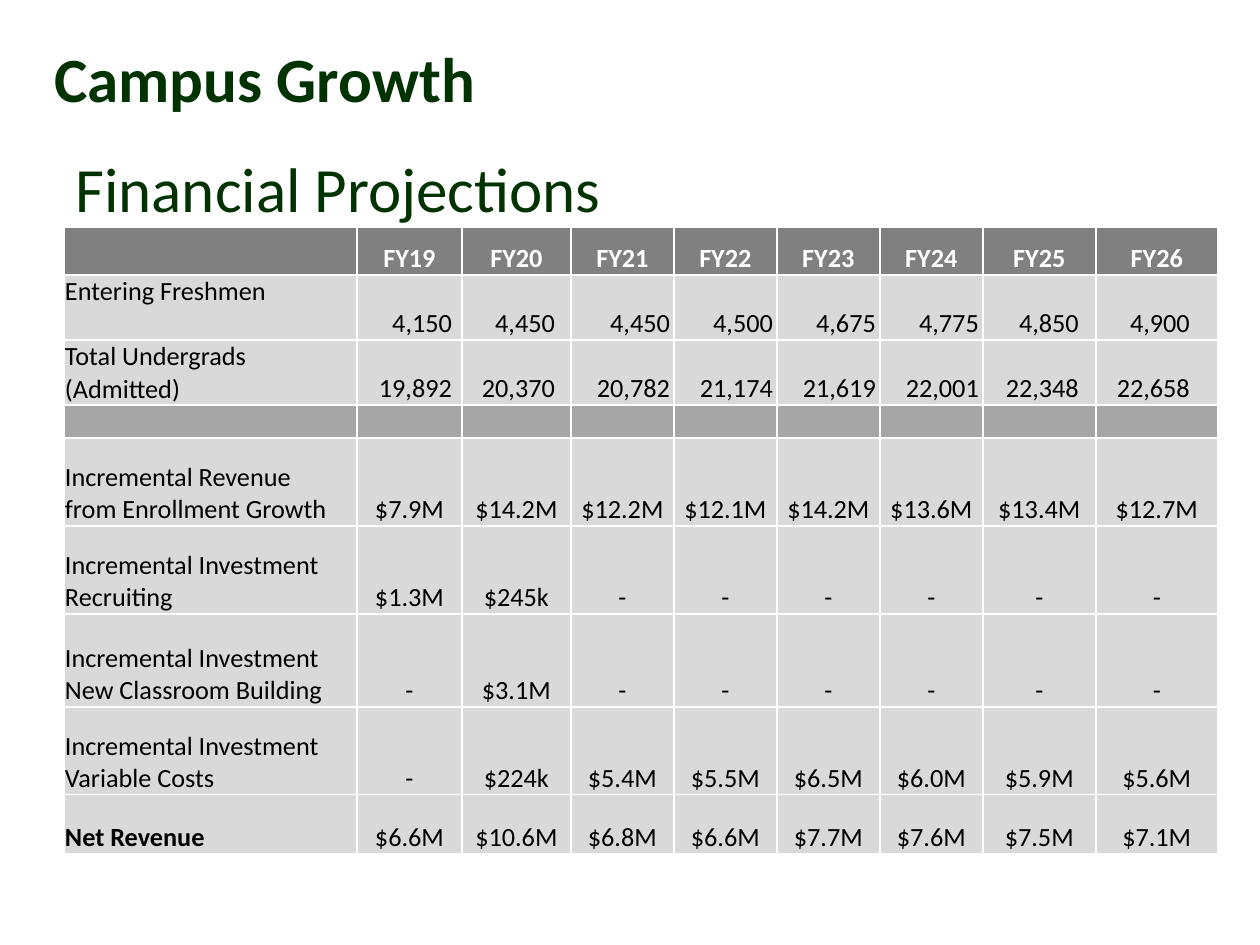
from pptx import Presentation
from pptx.dml.color import RGBColor
from pptx.enum.text import MSO_ANCHOR, PP_ALIGN
from pptx.oxml import parse_xml
from pptx.oxml.ns import nsdecls
from pptx.util import Emu, Pt

TOP, MIDDLE, BOTTOM = MSO_ANCHOR.TOP, MSO_ANCHOR.MIDDLE, MSO_ANCHOR.BOTTOM
LEFT, CENTER, RIGHT = PP_ALIGN.LEFT, PP_ALIGN.CENTER, PP_ALIGN.RIGHT

GREEN = RGBColor(0x00, 0x33, 0x00)
BLACK = RGBColor(0x00, 0x00, 0x00)
WHITE = RGBColor(0xFF, 0xFF, 0xFF)
HEADER_GRAY = RGBColor(0x80, 0x80, 0x80)
DIVIDER_GRAY = RGBColor(0xA6, 0xA6, 0xA6)
BODY_GRAY = RGBColor(0xD9, 0xD9, 0xD9)

PX_PER_INCH = 126
FONT = "Calibri"
COLUMN_WIDTHS = [293, 105, 109, 103, 103, 103, 103, 113, 122]
ROW_HEIGHTS = [48, 65, 65, 33, 88, 88, 93, 88, 59]
COUNT_INSETS = [10, 16, 4, 4, 4, 4, 17, 28]
HEADER_ROW, DIVIDER_ROW, NET_ROW = 0, 3, 8
COUNT_ROWS = (1, 2)

PROJECTIONS = [
    ["", "FY19", "FY20", "FY21", "FY22", "FY23", "FY24", "FY25", "FY26"],
    ["Entering Freshmen", "4,150", "4,450", "4,450", "4,500", "4,675", "4,775", "4,850", "4,900"],
    ["Total Undergrads (Admitted)", "19,892", "20,370", "20,782", "21,174", "21,619", "22,001",
     "22,348", "22,658"],
    [""] * 9,
    ["Incremental Revenue\nfrom Enrollment Growth", "$7.9M", "$14.2M", "$12.2M", "$12.1M",
     "$14.2M", "$13.6M", "$13.4M", "$12.7M"],
    ["Incremental Investment Recruiting", "$1.3M", "$245k"] + ["-"] * 6,
    ["Incremental Investment New Classroom Building", "-", "$3.1M"] + ["-"] * 6,
    ["Incremental Investment Variable Costs", "-", "$224k", "$5.4M", "$5.5M", "$6.5M", "$6.0M",
     "$5.9M", "$5.6M"],
    ["Net Revenue", "$6.6M", "$10.6M", "$6.8M", "$6.6M", "$7.7M", "$7.6M", "$7.5M", "$7.1M"],
]


def px(length):
    """Turn whole pixels into EMU."""
    return Emu(round(length * 914400 / PX_PER_INCH))


def apply_format(target, values):
    """Set each attribute named in a dict of format values."""
    for name, value in values.items():
        setattr(target, name, value)


def format_para(para, size, color, bold, align):
    """Give a paragraph its alignment and font."""
    para.alignment = align
    apply_format(para.font, {"name": FONT, "size": Pt(size), "bold": bold})
    para.font.color.rgb = color


def add_heading(page, left, top, width, height, text, bold):
    """Place a large green heading, centred vertically in its box."""
    box = page.shapes.add_textbox(px(left), px(top), px(width), px(height))
    frame = box.text_frame
    apply_format(frame, {"word_wrap": True, "vertical_anchor": MIDDLE, "text": text})
    format_para(frame.paragraphs[0], 36, GREEN, bold, LEFT)


def add_borders(cell):
    """Draw thin white lines on all four sides of a cell."""
    properties = cell._tc.get_or_add_tcPr()
    for side in ("lnL", "lnR", "lnT", "lnB"):
        properties.append(parse_xml(
            f'<a:{side} {nsdecls("a")} w="{Pt(1)}"><a:solidFill>'
            f'<a:srgbClr val="{WHITE}"/></a:solidFill></a:{side}>'))


def fill_cell(cell, row, column, text):
    """Write and style one table cell according to its row and column."""
    is_header = row == HEADER_ROW
    is_label = column == 0
    is_count = row in COUNT_ROWS and not is_label
    align = LEFT if is_label else RIGHT if is_count else CENTER
    apply_format(cell, {
        "text": text,
        "margin_left": px(1),
        "margin_top": px(1),
        "margin_right": px(COUNT_INSETS[column - 1] if is_count else 1),
        "margin_bottom": 0,
        "vertical_anchor": TOP if is_label and row == COUNT_ROWS[0] else BOTTOM,
    })
    add_borders(cell)
    cell.fill.solid()
    cell.fill.fore_color.rgb = {HEADER_ROW: HEADER_GRAY, DIVIDER_ROW: DIVIDER_GRAY}.get(row, BODY_GRAY)
    bold = is_header or (is_label and row == NET_ROW)
    for para in cell.text_frame.paragraphs:
        format_para(para, 15, WHITE if is_header else BLACK, bold, align)


def add_projections(page, left, top):
    """Place the table of yearly financial projections."""
    frame = page.shapes.add_table(
        len(ROW_HEIGHTS), len(COLUMN_WIDTHS), px(left), px(top),
        px(sum(COLUMN_WIDTHS)), px(sum(ROW_HEIGHTS)))
    table = frame.table
    table.horz_banding = False
    for column, width in zip(table.columns, COLUMN_WIDTHS):
        column.width = px(width)
    for row, height in zip(table.rows, ROW_HEIGHTS):
        row.height = px(height)
    for row, texts in enumerate(PROJECTIONS):
        for column, text in enumerate(texts):
            fill_cell(table.cell(row, column), row, column, text)


def main():
    """Build the campus growth slide and save it."""
    deck = Presentation()
    apply_format(deck, {"slide_width": px(1260), "slide_height": px(945)})
    page = deck.slides.add_slide(deck.slide_layouts[6])
    add_heading(page, 42, 0, 1187, 154, "Campus Growth", True)
    add_heading(page, 63, 110, 1187, 154, "Financial Projections", False)
    add_projections(page, 64, 227)
    deck.save("out.pptx")


if __name__ == "__main__":
    main()
